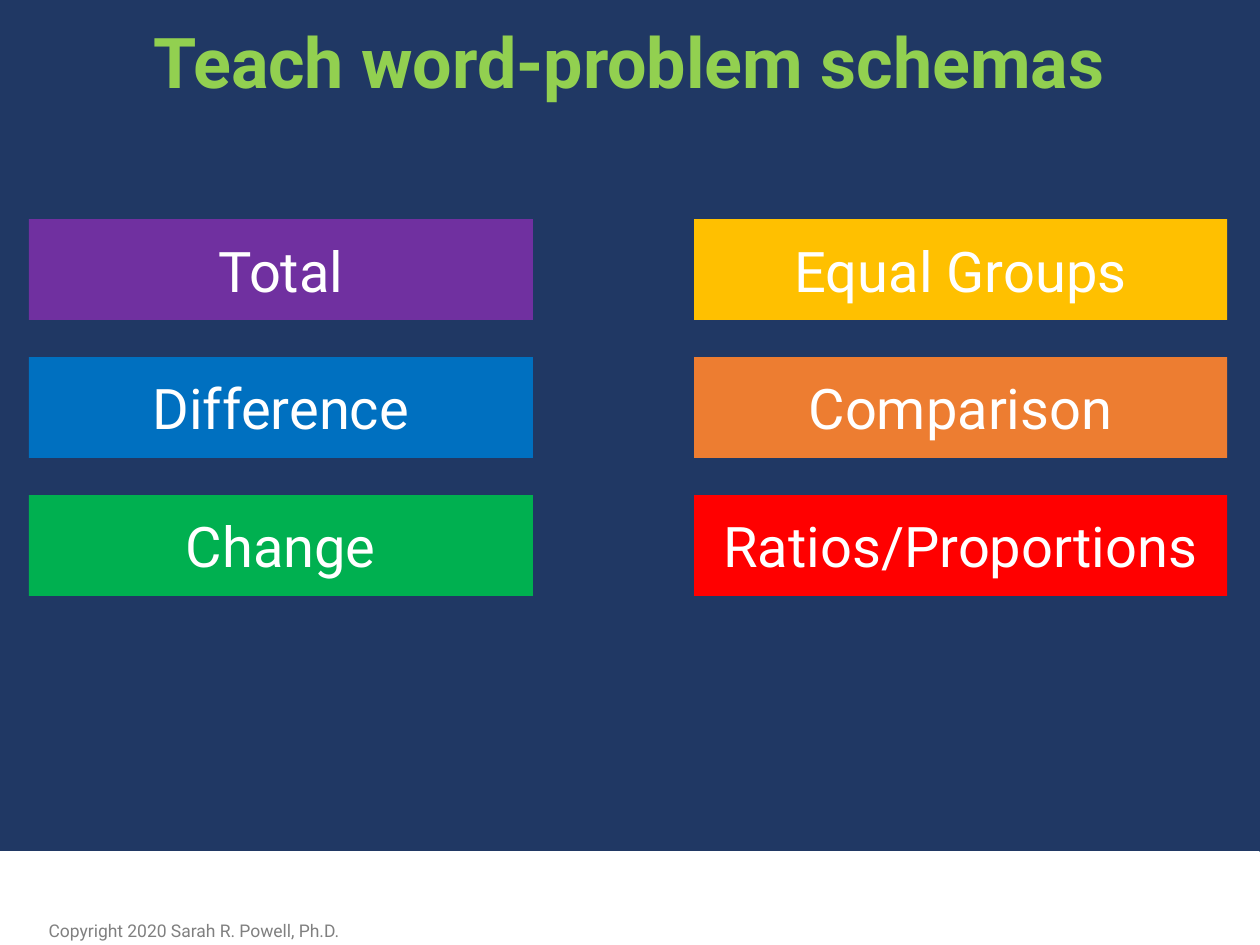
from pptx import Presentation
from pptx.dml.color import RGBColor
from pptx.enum.shapes import MSO_SHAPE as Shape
from pptx.enum.text import MSO_ANCHOR as Anchor, PP_ALIGN as Align
from pptx.util import Inches, Pt


def color(hex_value):
    return RGBColor.from_string(hex_value)


def write(box, text, align, anchor, size, text_color, bold=False):
    frame = box.text_frame
    frame.word_wrap = True
    frame.vertical_anchor = anchor
    line = frame.paragraphs[0]
    line.alignment = align
    run = line.add_run()
    run.text = text
    run.font.color.rgb = color(text_color)
    font_values = {"name": "Roboto", "size": Pt(size), "bold": bold}
    for key, value in font_values.items():
        setattr(run.font, key, value)


deck = Presentation()
deck.slide_width, deck.slide_height = Inches(10), Inches(7.5)
slide = deck.slides.add_slide(deck.slide_layouts[6])
shapes = slide.shapes

# Background
slide.background.fill.solid()
slide.background.fill.fore_color.rgb = color("203864")

# Footer band with the copyright line
band = shapes.add_shape(Shape.RECTANGLE, 0, Inches(6.76), Inches(9.99), Inches(0.74))
band.shadow.inherit = False
band.fill.solid()
band.fill.fore_color.rgb = color("FFFFFF")
band.line.color.rgb = color("FFFFFF")
band.line.width = Pt(1)

copyright_line = shapes.add_textbox(Inches(-0.85), Inches(7.3), Inches(3.64), Inches(0.17))
copyright_line.text_frame.margin_top = copyright_line.text_frame.margin_bottom = 0
write(copyright_line, "Copyright 2020 Sarah R. Powell, Ph.D.", Align.RIGHT, Anchor.MIDDLE, 10, "808080")

# Title
title = shapes.add_textbox(Inches(0.34), Inches(0.1), Inches(9.3), Inches(0.77))
write(title, "Teach word-problem schemas", Align.CENTER, Anchor.TOP, 40, "92D050", bold=True)

# Schemas: two columns (left, width) of three evenly spaced rows
first_row, row_step, row_height = 1.74, 1.095, 0.8
columns = [
    (0.23, 4, [("Total", "7030A0"), ("Difference", "0070C0"), ("Change", "00B050")]),
    (5.51, 4.23, [("Equal Groups", "FFC000"), ("Comparison", "ED7D31"), ("Ratios/Proportions", "FF0000")]),
]
for left, width, schemas in columns:
    for row, (schema, fill) in enumerate(schemas):
        top = first_row + row * row_step
        card = shapes.add_shape(Shape.RECTANGLE, Inches(left), Inches(top), Inches(width), Inches(row_height))
        card.shadow.inherit = False
        card.fill.solid()
        card.fill.fore_color.rgb = color(fill)
        card.line.fill.background()
        write(card, schema, Align.CENTER, Anchor.MIDDLE, 32, "FFFFFF")

deck.save("out.pptx")
